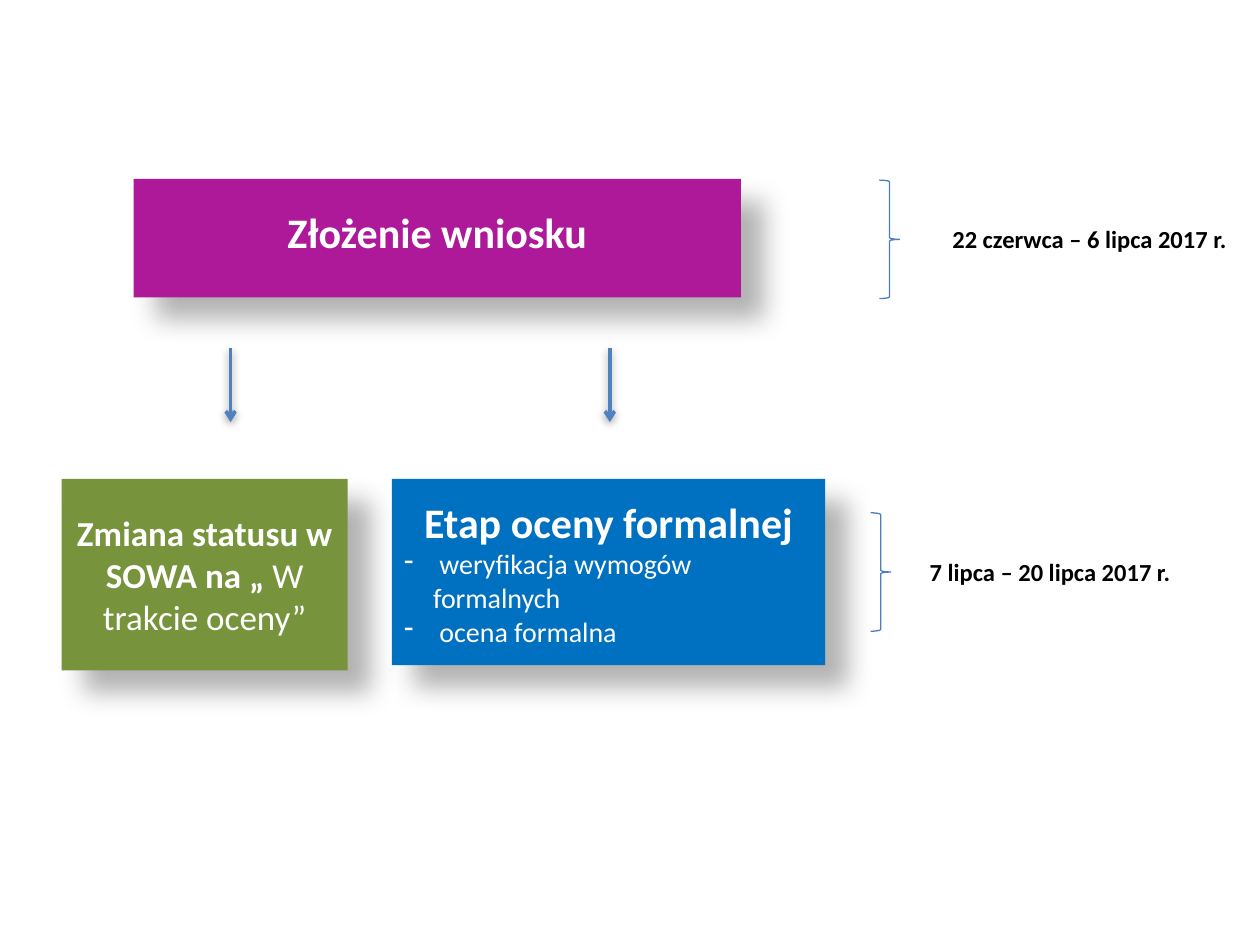
from dataclasses import dataclass
from typing import Optional

import lxml.etree
import pptx
import pptx.dml.color
import pptx.enum.shapes
import pptx.enum.text
import pptx.oxml.ns
import pptx.util

Inches = pptx.util.Inches
Pt = pptx.util.Pt
RGBColor = pptx.dml.color.RGBColor
Align = pptx.enum.text.PP_ALIGN
Shape = pptx.enum.shapes.MSO_SHAPE
qn = pptx.oxml.ns.qn

WHITE = RGBColor(0xFF, 0xFF, 0xFF)
BLACK = RGBColor(0x00, 0x00, 0x00)
PURPLE = RGBColor(0xAD, 0x19, 0x98)
GREEN = RGBColor(0x77, 0x93, 0x3C)
BLUE = RGBColor(0x00, 0x70, 0xC0)
BRACE_BLUE = RGBColor(0x4B, 0x7E, 0xBC)
ARROW_BLUE = RGBColor(0x4F, 0x81, 0xBD)
BULLET_INDENT = Inches(0.23)


@dataclass(frozen=True)
class Area:
    left: float
    top: float
    width: float
    height: float

    def lengths(self) -> list:
        return [Inches(v) for v in (self.left, self.top, self.width, self.height)]


@dataclass(frozen=True)
class Run:
    text: str
    size: int
    bold: bool = True
    color: RGBColor = WHITE


@dataclass(frozen=True)
class Line:
    runs: tuple[Run, ...]
    align: Align = Align.CENTER
    bullet: Optional[str] = None


@dataclass(frozen=True)
class Shadow:
    opacity: int
    blur: float
    distance: float
    angle: int


@dataclass(frozen=True)
class Stage:
    area: Area
    color: RGBColor
    lines: tuple[Line, ...] = ()


@dataclass(frozen=True)
class Deadline:
    brace: Area
    label: Area
    text: str


BOX_SHADOW = Shadow(30, 15, 18, 45)
ARROW_SHADOW = Shadow(38, 5, 1.6, 90)

STAGES = (
    Stage(Area(1.06, 1.42, 4.82, 0.94), PURPLE),
    Stage(Area(0.49, 3.8, 2.27, 1.52), GREEN, (
        Line((Run("Zmiana statusu w SOWA na „", 20),
              Run(" W trakcie oceny”", 20, bold=False))),
    )),
    Stage(Area(3.11, 3.8, 3.44, 1.48), BLUE, (
        Line((Run("Etap oceny formalnej", 24),)),
        Line((Run(" weryfikacja wymogów formalnych", 16, bold=False),), Align.LEFT, "-"),
        Line((Run(" ocena formalna", 16, bold=False),), Align.LEFT, "-"),
    )),
)
DEADLINES = (
    Deadline(Area(6.98, 1.43, 0.16, 0.94), Area(7.46, 1.73, 2.58, 0.34),
             "22 czerwca – 6 lipca 2017 r."),
    Deadline(Area(6.91, 4.07, 0.16, 0.94), Area(7.28, 4.37, 2.51, 0.34),
             "7 lipca – 20 lipca 2017 r."),
)
ARROW_XS = (1.83, 4.84)
ARROW_TOP, ARROW_BOTTOM = 2.76, 3.35


def add_shadow(shape, shadow: Shadow) -> None:
    effects = lxml.etree.SubElement(shape._element.spPr, qn("a:effectLst"))
    outer = lxml.etree.SubElement(
        effects, qn("a:outerShdw"), blurRad=str(Pt(shadow.blur)),
        dist=str(Pt(shadow.distance)), dir=str(shadow.angle * 60000),
        algn="tl", rotWithShape="0")
    color = lxml.etree.SubElement(outer, qn("a:srgbClr"), val=str(BLACK))
    lxml.etree.SubElement(color, qn("a:alpha"), val=str(shadow.opacity * 1000))


def add_bullet(paragraph, symbol: str) -> None:
    properties = paragraph._p.get_or_add_pPr()
    properties.set("marL", str(BULLET_INDENT))
    properties.set("indent", str(-BULLET_INDENT))
    lxml.etree.SubElement(properties, qn("a:buChar"), char=symbol)


def write(frame, lines: tuple[Line, ...]) -> None:
    frame.word_wrap = True
    for index, line in enumerate(lines):
        paragraph = frame.add_paragraph() if index else frame.paragraphs[0]
        paragraph.alignment = line.align
        if line.bullet:
            add_bullet(paragraph, line.bullet)
        for part in line.runs:
            run = paragraph.add_run()
            run.text = part.text
            formats = {"name": "Calibri", "size": Pt(part.size), "bold": part.bold}
            for name, value in formats.items():
                setattr(run.font, name, value)
            run.font.color.rgb = part.color


def add_stage(slide, stage: Stage) -> None:
    box = slide.shapes.add_shape(Shape.RECTANGLE, *stage.area.lengths())
    box.fill.solid()
    box.fill.fore_color.rgb = stage.color
    box.line.fill.background()
    add_shadow(box, BOX_SHADOW)
    box.text_frame.vertical_anchor = pptx.enum.text.MSO_ANCHOR.MIDDLE
    write(box.text_frame, stage.lines)


def add_label(slide, area: Area, line: Line) -> None:
    label = slide.shapes.add_textbox(*area.lengths())
    write(label.text_frame, (line,))
    label.text_frame.auto_size = pptx.enum.text.MSO_AUTO_SIZE.SHAPE_TO_FIT_TEXT


def add_deadline(slide, deadline: Deadline) -> None:
    brace = slide.shapes.add_shape(Shape.RIGHT_BRACE, *deadline.brace.lengths())
    brace.fill.background()
    brace.line.color.rgb = BRACE_BLUE
    brace.line.width = Pt(0.75)
    brace.shadow.inherit = False
    add_label(slide, deadline.label,
              Line((Run(deadline.text, 14, color=BLACK),), Align.LEFT))


def add_down_arrow(slide, x: float) -> None:
    arrow = slide.shapes.add_connector(
        pptx.enum.shapes.MSO_CONNECTOR.STRAIGHT,
        Inches(x), Inches(ARROW_TOP), Inches(x), Inches(ARROW_BOTTOM))
    arrow.line.color.rgb = ARROW_BLUE
    arrow.line.width = Pt(2)
    outline = arrow._element.spPr.find(qn("a:ln"))
    lxml.etree.SubElement(outline, qn("a:tailEnd"), type="arrow")
    add_shadow(arrow, ARROW_SHADOW)


def main() -> None:
    deck = pptx.Presentation()
    deck.slide_width, deck.slide_height = Inches(10), Inches(7.5)
    slide = deck.slides.add_slide(deck.slide_layouts[6])

    # Stages of the application
    for stage in STAGES:
        add_stage(slide, stage)
    add_label(slide, Area(1.83, 1.59, 3.28, 0.51), Line((Run("Złożenie wniosku", 24),)))

    # Dates beside each row
    for deadline in DEADLINES:
        add_deadline(slide, deadline)

    # Arrows from the first row to the second
    for x in ARROW_XS:
        add_down_arrow(slide, x)

    deck.save("out.pptx")


if __name__ == "__main__":
    main()
